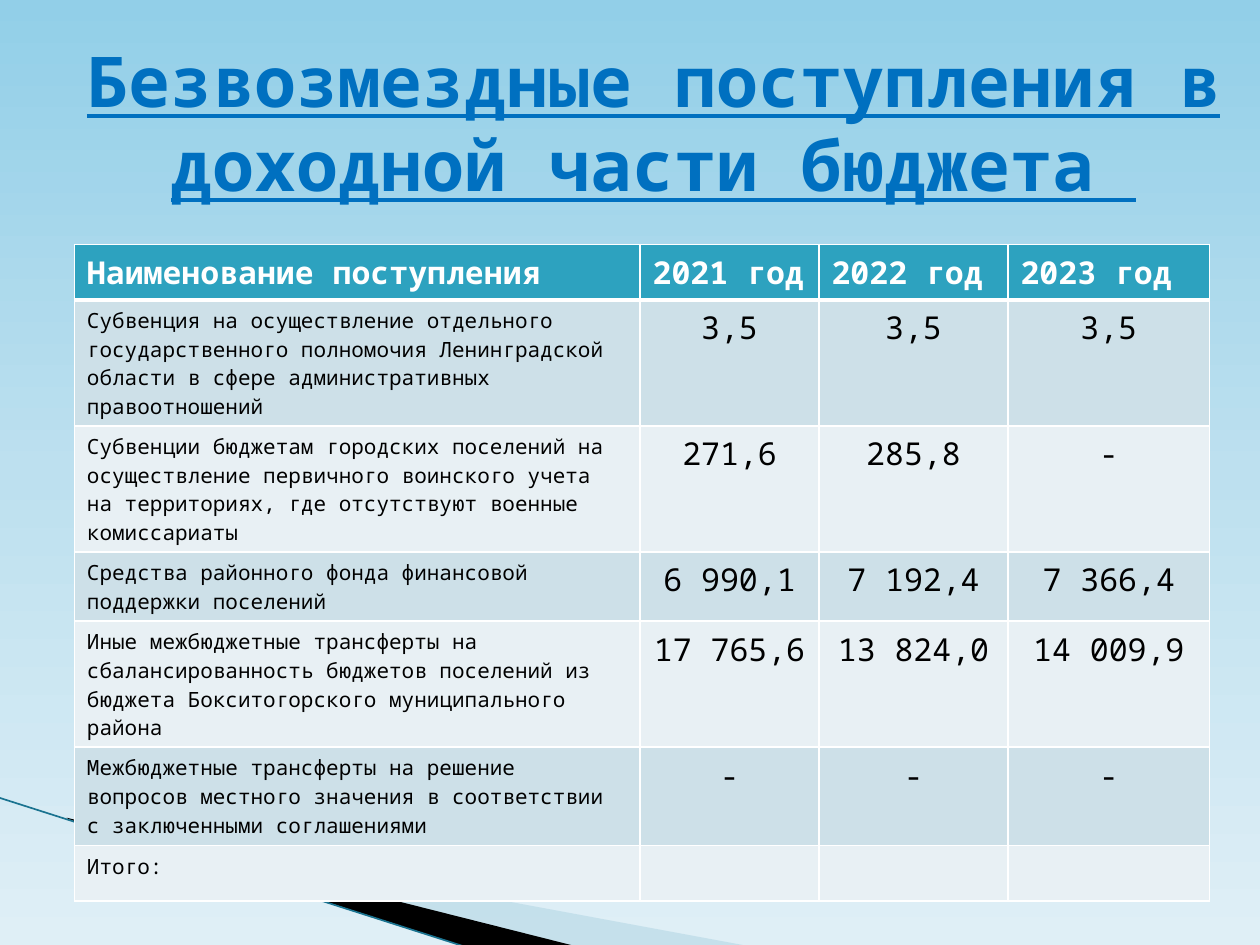
from dataclasses import dataclass

from pptx import Presentation
from pptx.dml.color import RGBColor
from pptx.enum.shapes import MSO_CONNECTOR
from pptx.enum.text import MSO_ANCHOR, PP_ALIGN
from pptx.oxml.ns import qn
from pptx.oxml.xmlchemy import OxmlElement
from pptx.util import Inches, Pt

FONT = "Noto Sans Mono"
COLORS = {
    "sky_top": "92CFE8",
    "sky_middle": "BDE0EF",
    "sky_bottom": "DFEFF6",
    "wedge": "A0CBDC",
    "black": "000000",
    "wave": "1A7390",
    "title": "0070C0",
    "header": "2DA2BF",
    "odd_row": "CDE0E8",
    "even_row": "E8F0F4",
    "white": "FFFFFF",
}


@dataclass(frozen=True)
class Wedge:
    points: tuple[tuple[float, float], ...]
    color: str
    opacity: int = 100


@dataclass(frozen=True)
class Receipt:
    name: str
    amounts: tuple[str, str, str]
    height: float


WEDGES = (
    Wedge(((0.55, 6.51), (5.95, 7.51), (4.56, 7.51), (0.55, 6.5)), "wedge", 40),
    Wedge(((0.53, 6.49), (4.57, 7.51), (3.72, 7.52), (0.54, 6.5)), "black"),
)
COLUMN_WIDTHS = (4.49, 1.42, 1.5, 1.6)
RECEIPTS = (
    Receipt("Наименование поступления", ("2021 год", "2022 год", "2023 год"), 0.44),
    Receipt("Субвенция на осуществление отдельного государственного полномочия "
            "Ленинградской области в сфере административных правоотношений",
            ("3,5", "3,5", "3,5"), 1),
    Receipt("Субвенции бюджетам городских поселений на осуществление первичного "
            "воинского учета на территориях, где отсутствуют военные комиссариаты",
            ("271,6", "285,8", "-"), 1),
    Receipt("Средства районного фонда финансовой поддержки поселений",
            ("6 990,1", "7 192,4", "7 366,4"), 0.55),
    Receipt("Иные межбюджетные трансферты на сбалансированность бюджетов поселений "
            "из бюджета Бокситогорского муниципального района",
            ("17 765,6", "13 824,0", "14 009,9"), 1),
    Receipt("Межбюджетные трансферты на решение вопросов местного значения "
            "в соответствии с заключенными соглашениями", ("-", "-", "-"), 0.78),
    Receipt("Итого:", ("", "", ""), 0.44),
)


def rgb(color: str) -> RGBColor:
    return RGBColor.from_string(COLORS[color])


def add_child(parent, tag: str, **attributes: str):
    child = OxmlElement(tag)
    for key, value in attributes.items():
        child.set(key, value)
    parent.append(child)
    return child


def paint_sky(slide) -> None:
    fill = slide.background.fill
    fill.gradient()
    fill.gradient_angle = 270
    stops = next(slide.element.iter(qn("a:gsLst")))
    for stop in list(stops):
        stops.remove(stop)
    for position, color in ((0, "sky_top"), (50, "sky_middle"), (100, "sky_bottom")):
        stop = add_child(stops, "a:gs", pos=str(position * 1000))
        add_child(stop, "a:srgbClr", val=COLORS[color])


def draw_wedge(slide, wedge: Wedge) -> None:
    start, *rest = [(Inches(x), Inches(y)) for x, y in wedge.points]
    builder = slide.shapes.build_freeform(*start)
    builder.add_line_segments(rest, close=True)
    outline = builder.convert_to_shape()
    outline.shadow.inherit = False
    outline.fill.solid()
    outline.fill.fore_color.rgb = rgb(wedge.color)
    outline.line.fill.background()
    if wedge.opacity < 100:
        color = next(outline.element.spPr.iter(qn("a:srgbClr")))
        add_child(color, "a:alpha", val=str(wedge.opacity * 1000))


def draw_wave(slide) -> None:
    wave = slide.shapes.add_connector(
        MSO_CONNECTOR.STRAIGHT, Inches(-0.01), Inches(6.33), Inches(3.71), Inches(7.52))
    wave.line.color.rgb = rgb("wave")
    wave.line.width = Pt(0.95)
    add_child(wave.element.spPr, "a:effectLst")


def style_paragraph(paragraph, size: int, color: str, bold: bool, align: PP_ALIGN) -> None:
    paragraph.alignment = align
    font = paragraph.font
    font.name, font.size, font.bold = FONT, Pt(size), bold
    font.color.rgb = rgb(color)


def draw_title(slide) -> None:
    title = slide.shapes.add_textbox(Inches(0.36), 0, Inches(9.65), Inches(1.25))
    frame = title.text_frame
    frame.word_wrap = True
    frame.vertical_anchor = MSO_ANCHOR.MIDDLE
    frame.margin_top = Inches(0.72)
    heading = frame.paragraphs[0]
    heading.text = "Безвозмездные поступления в доходной части бюджета "
    style_paragraph(heading, 40, "title", True, PP_ALIGN.CENTER)
    heading.font.underline = True


def set_borders(cell, bottom: int) -> None:
    properties = cell._tc.get_or_add_tcPr()
    for index, (side, width) in enumerate((("L", 1), ("R", 1), ("T", 1), ("B", bottom))):
        border = OxmlElement(f"a:ln{side}")
        border.set("w", str(Pt(width)))
        add_child(add_child(border, "a:solidFill"), "a:srgbClr", val=COLORS["white"])
        properties.insert(index, border)


def draw_receipts(slide) -> None:
    table = slide.shapes.add_table(
        len(RECEIPTS), len(COLUMN_WIDTHS), Inches(0.59), Inches(1.94),
        Inches(sum(COLUMN_WIDTHS)), Inches(sum(r.height for r in RECEIPTS))).table
    for column, width in zip(table.columns, COLUMN_WIDTHS):
        column.width = Inches(width)
    for row_index, receipt in enumerate(RECEIPTS):
        table.rows[row_index].height = Inches(receipt.height)
        is_header = row_index == 0
        row_color = "header" if is_header else "odd_row" if row_index % 2 else "even_row"
        for column_index, text in enumerate((receipt.name, *receipt.amounts)):
            is_name = column_index == 0
            cell = table.cell(row_index, column_index)
            cell.text = text
            cell.fill.solid()
            cell.fill.fore_color.rgb = rgb(row_color)
            style_paragraph(
                cell.text_frame.paragraphs[0],
                12 if is_name and not is_header else 18,
                "white" if is_header else "black",
                is_header,
                PP_ALIGN.LEFT if is_name or is_header else PP_ALIGN.CENTER)
            set_borders(cell, 3 if is_header else 1)


def main() -> None:
    presentation = Presentation()
    presentation.slide_width, presentation.slide_height = Inches(10), Inches(7.5)
    slide = presentation.slides.add_slide(presentation.slide_layouts[6])
    paint_sky(slide)
    for wedge in WEDGES:
        draw_wedge(slide, wedge)
    draw_wave(slide)
    draw_title(slide)
    draw_receipts(slide)
    presentation.save("out.pptx")


if __name__ == "__main__":
    main()
